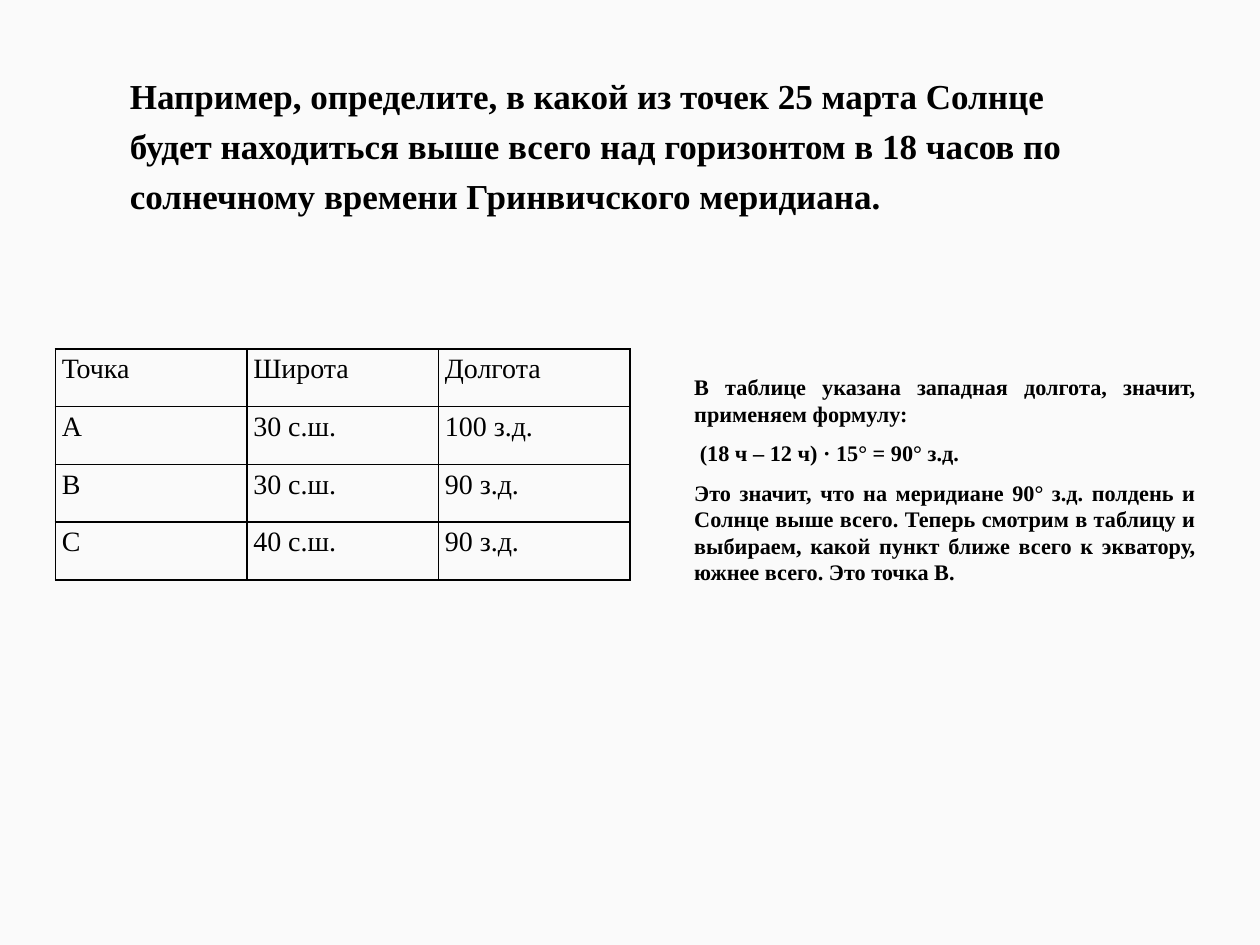
from lxml import etree
from pptx import Presentation
from pptx.dml.color import RGBColor
from pptx.enum.text import MSO_ANCHOR, MSO_AUTO_SIZE, PP_ALIGN
from pptx.oxml.ns import qn
from pptx.util import Pt

BLACK = RGBColor(0x00, 0x00, 0x00)
BACKGROUND = RGBColor(0xFA, 0xFA, 0xFA)
FONT = "Times New Roman"
LEFT, JUSTIFY = PP_ALIGN.LEFT, PP_ALIGN.JUSTIFY
TOP, BOTTOM = MSO_ANCHOR.TOP, MSO_ANCHOR.BOTTOM
NO_AUTOFIT = MSO_AUTO_SIZE.NONE

QUESTION = [
    "Например, определите, в какой из точек 25 марта Солнце будет находиться "
    "выше всего над горизонтом в 18 часов по солнечному времени "
    "Гринвичского меридиана.",
]
SOLUTION = [
    "В таблице указана западная долгота, значит, применяем формулу:",
    " (18 ч – 12 ч) · 15° = 90° з.д.",
    "Это значит, что на меридиане 90° з.д. полдень и Солнце выше всего. "
    "Теперь смотрим в таблицу и выбираем, какой пункт ближе всего к экватору, "
    "южнее всего. Это точка В.",
]
POINTS = [
    ["Точка", "Широта", "Долгота"],
    ["А", "30 с.ш.", "100 з.д."],
    ["В", "30 с.ш.", "90 з.д."],
    ["С", "40 с.ш.", "90 з.д."],
]


def write(paragraph, text, size, bold, spacing, alignment=LEFT):
    paragraph.alignment = alignment
    paragraph.line_spacing = spacing
    run = paragraph.add_run()
    run.text = text
    run.font.name = FONT
    run.font.size = Pt(size)
    run.font.bold = bold
    run.font.color.rgb = BLACK


def fill_placeholder(shape, box, bottom, texts, size, spacing, alignment):
    """Place the shape and write bold, unbulleted paragraphs at its bottom."""
    shape.left, shape.top, shape.width, shape.height = map(Pt, box)
    frame = shape.text_frame
    frame.word_wrap = True
    frame.auto_size = NO_AUTOFIT
    frame.vertical_anchor = BOTTOM
    frame.margin_bottom = Pt(bottom)
    for index, text in enumerate(texts):
        paragraph = frame.add_paragraph() if index else frame.paragraphs[0]
        properties = paragraph._p.get_or_add_pPr()
        properties.set("marL", "0")
        properties.set("indent", "0")
        etree.SubElement(properties, qn("a:buNone"))
        paragraph.space_before = Pt(7.5 if index else 0)
        write(paragraph, text, size, True, spacing, alignment)


presentation = Presentation()
presentation.slide_width = Pt(720)
presentation.slide_height = Pt(540)
slide = presentation.slides.add_slide(presentation.slide_layouts[1])
slide.background.fill.solid()
slide.background.fill.fore_color.rgb = BACKGROUND

fill_placeholder(slide.shapes.title, (67, 0, 588, 144), 20,
                 QUESTION, 20, 1.2, LEFT)
fill_placeholder(slide.placeholders[1], (389.5, 202.3, 301, 144), 11.4,
                 SOLUTION, 12.7, 0.99, JUSTIFY)

# Table of points
column_width, row_height = 109.5, 33
table = slide.shapes.add_table(
    len(POINTS), len(POINTS[0]), Pt(31.7), Pt(199.4),
    Pt(column_width * len(POINTS[0])), Pt(row_height * len(POINTS))).table
for column in table.columns:
    column.width = Pt(column_width)
for row, values in zip(table.rows, POINTS):
    row.height = Pt(row_height)
    for cell, value in zip(row.cells, values):
        cell.margin_left = cell.margin_right = Pt(3.6)
        cell.margin_top = cell.margin_bottom = Pt(0)
        cell.vertical_anchor = TOP
        write(cell.text_frame.paragraphs[0], value, 16, False, 1.15)
        properties = cell._tc.get_or_add_tcPr()
        for side in ("a:lnL", "a:lnR", "a:lnT", "a:lnB"):
            border = etree.SubElement(properties, qn(side), w=str(Pt(1)))
            solid = etree.SubElement(border, qn("a:solidFill"))
            etree.SubElement(solid, qn("a:srgbClr"), val=str(BLACK))
        cell.fill.background()

presentation.save("out.pptx")
